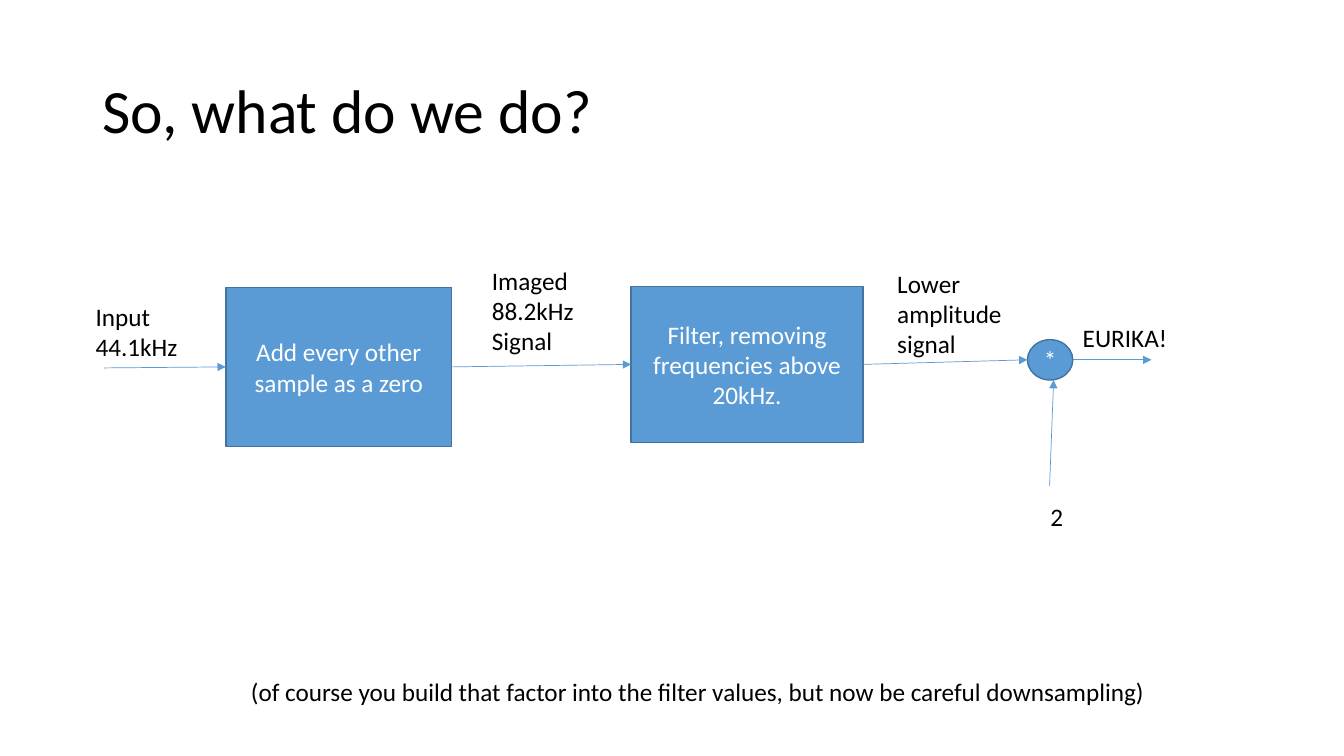
from lxml.etree import SubElement
from pptx import Presentation
from pptx.dml.color import RGBColor
from pptx.enum.shapes import MSO_CONNECTOR, MSO_SHAPE
from pptx.enum.text import MSO_ANCHOR, PP_ALIGN
from pptx.oxml.ns import qn
from pptx.util import Inches, Pt

FONT = "Calibri"
BLACK, WHITE = "000000", "FFFFFF"
BLUE, DARK_BLUE = "5B9BD5", "43739E"
LEFT_SIDE, RIGHT_SIDE = 1, 3


def color(hex_value):
    return RGBColor.from_string(hex_value)


def write_text(shape, lines, size, hex_value, alignment):
    frame = shape.text_frame
    frame.text = "\n".join(lines)
    for paragraph in frame.paragraphs:
        paragraph.alignment = alignment
        paragraph.font.name = FONT
        paragraph.font.size = Pt(size)
        paragraph.font.color.rgb = color(hex_value)


def add_label(slide, box, *lines, size=18, anchor=MSO_ANCHOR.TOP, wrap=True):
    label = slide.shapes.add_textbox(*map(Inches, box))
    label.text_frame.word_wrap = wrap
    label.text_frame.vertical_anchor = anchor
    write_text(label, lines, size, BLACK, PP_ALIGN.LEFT)
    return label


def add_block(slide, preset, box, text):
    block = slide.shapes.add_shape(preset, *map(Inches, box))
    block.shadow.inherit = False
    block.fill.solid()
    block.fill.fore_color.rgb = color(BLUE)
    block.line.color.rgb = color(DARK_BLUE)
    block.line.width = Pt(1)
    block.text_frame.word_wrap = True
    block.text_frame.vertical_anchor = MSO_ANCHOR.MIDDLE
    write_text(block, [text], 18, WHITE, PP_ALIGN.CENTER)
    return block


def add_arrow(slide, start, end, source=None, target=None):
    """Draw an arrow, joined to the right of source and the left of target."""
    arrow = slide.shapes.add_connector(
        MSO_CONNECTOR.STRAIGHT, *map(Inches, start + end))
    if source is not None:
        arrow.begin_connect(source, RIGHT_SIDE)
    if target is not None:
        arrow.end_connect(target, LEFT_SIDE)
    arrow.line.color.rgb = color(BLUE)
    arrow.line.width = Pt(0.5)
    SubElement(arrow.line._get_or_add_ln(), qn("a:tailEnd"), type="triangle")
    SubElement(arrow._element.spPr, qn("a:effectLst"))


def main():
    presentation = Presentation()
    presentation.slide_width = Inches(13.33)
    presentation.slide_height = Inches(7.5)
    slide = presentation.slides.add_slide(presentation.slide_layouts[6])

    title = add_label(slide, (0.92, 0.4, 11.5, 1.45), "So, what do we do?",
                      size=44, anchor=MSO_ANCHOR.MIDDLE)
    title.text_frame.paragraphs[0].line_spacing = 0.9

    zero_insertion = add_block(slide, MSO_SHAPE.RECTANGLE, (2.24, 2.85, 2.24, 1.58),
                               "Add every other sample as a zero")
    low_pass = add_block(slide, MSO_SHAPE.RECTANGLE, (6.26, 2.84, 2.3, 1.55),
                         "Filter, removing frequencies above 20kHz.")
    add_block(slide, MSO_SHAPE.OVAL, (10.19, 3.37, 0.45, 0.4), "*")

    add_arrow(slide, (1.03, 3.65), (2.24, 3.64), target=zero_insertion)
    add_arrow(slide, (4.48, 3.64), (6.26, 3.61), zero_insertion, low_pass)
    add_arrow(slide, (8.56, 3.61), (10.19, 3.57), source=low_pass)
    add_arrow(slide, (10.41, 4.82), (10.45, 3.77))
    add_arrow(slide, (10.64, 3.57), (11.42, 3.57))

    add_label(slide, (0.85, 2.94, 1.02, 0.71), "Input", "44.1kHz")
    add_label(slide, (4.78, 2.58, 1.19, 1.01), "Imaged", "88.2kHz", "Signal")
    add_label(slide, (8.8, 2.61, 1.25, 1.01), "Lower amplitude", "signal")
    add_label(slide, (10.64, 3.15, 1.05, 0.4), "EURIKA!", wrap=False)
    add_label(slide, (10.32, 4.92, 0.31, 0.4), "2")
    add_label(slide, (2.39, 6.66, 9.18, 0.4),
              "(of course you build that factor into the filter values, "
              "but now be careful downsampling)", wrap=False)

    presentation.save("out.pptx")


if __name__ == "__main__":
    main()
